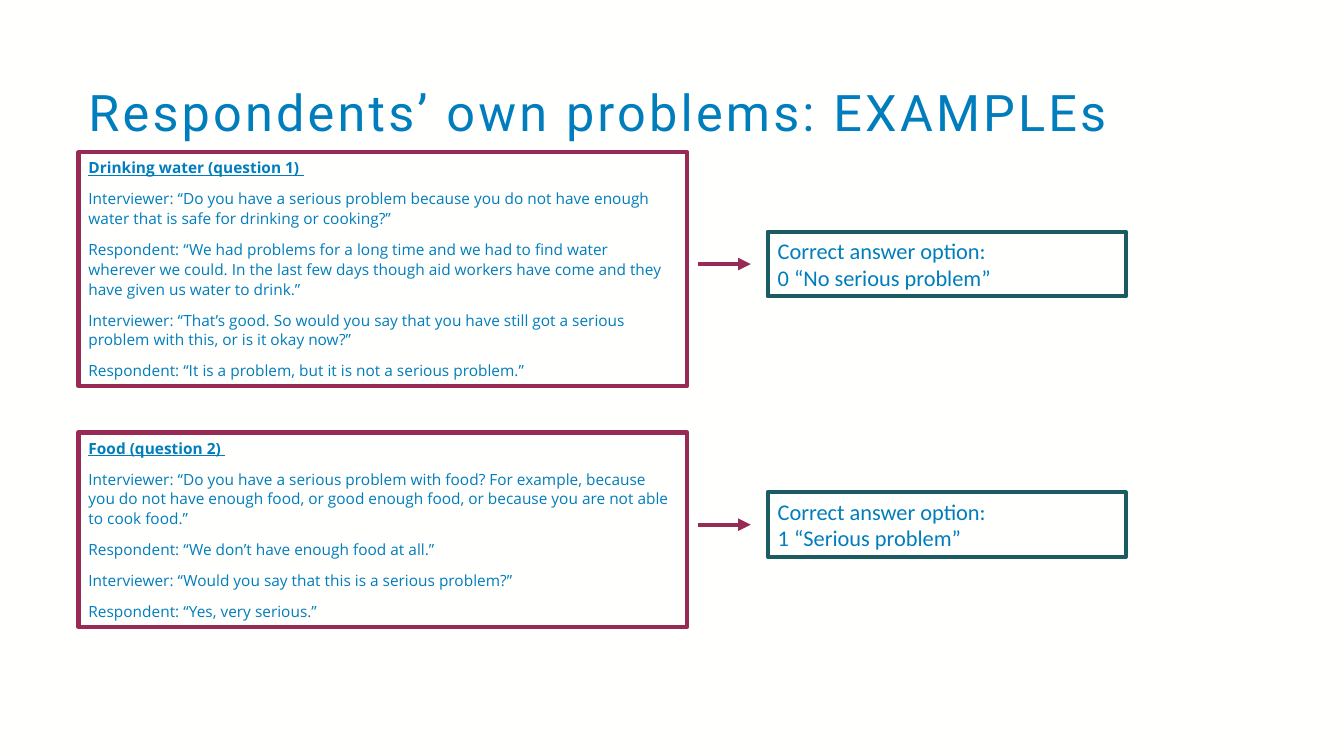
from lxml import etree
from pptx import Presentation
from pptx.dml.color import RGBColor
from pptx.enum.shapes import MSO_CONNECTOR, MSO_SHAPE
from pptx.enum.text import MSO_ANCHOR, MSO_AUTO_SIZE, PP_ALIGN
from pptx.oxml.ns import qn
from pptx.util import Cm, Pt

RECTANGLE = MSO_SHAPE.RECTANGLE
STRAIGHT = MSO_CONNECTOR.STRAIGHT
LEFT = PP_ALIGN.LEFT
TOP, MIDDLE = MSO_ANCHOR.TOP, MSO_ANCHOR.MIDDLE
GROW = MSO_AUTO_SIZE.SHAPE_TO_FIT_TEXT

COLOURS = {
    "background": "FFFFFE",
    "text": "007DBC",
    "dialogue": "982B56",
    "answer": "1B5B62",
}

# Shared geometry in centimetres
MARGIN = 1.98
DIALOGUE_WIDTH = 15.34
ARROW_START, ARROW_END = 17.6, 18.92
ANSWER_LEFT, ANSWER_WIDTH, ANSWER_HEIGHT = 19.35, 9.02, 1.63

# Each example: top and height of the dialogue, heading, turns, answer
EXAMPLES = [
    (3.84, 5.89, "Drinking water (question 1) ", [
        "Interviewer: “Do you have a serious problem because you do not have "
        "enough water that is safe for drinking or cooking?”",
        "Respondent: “We had problems for a long time and we had to find water "
        "wherever we could. In the last few days though aid workers have come "
        "and they have given us water to drink.”",
        "Interviewer: “That’s good. So would you say that you have still got a "
        "serious problem with this, or is it okay now?”",
        "Respondent: “It is a problem, but it is not a serious problem.”",
    ], "0 “No serious problem”"),
    (10.9, 4.9, "Food (question 2) ", [
        "Interviewer: “Do you have a serious problem with food? For example, "
        "because you do not have enough food, or good enough food, or because "
        "you are not able to cook food.”",
        "Respondent: “We don’t have enough food at all.”",
        "Interviewer: “Would you say that this is a serious problem?”",
        "Respondent: “Yes, very serious.”",
    ], "1 “Serious problem”"),
]


def colour(name):
    return RGBColor.from_string(COLOURS[name])


def add_span(para, text, font, size, heading=False):
    span = para.add_run()
    span.text = text
    span.font.name = font
    span.font.size = Pt(size)
    span.font.color.rgb = colour("text")
    span.font.bold = heading
    span.font.underline = heading
    return span


def add_title(page, text):
    box = page.shapes.add_textbox(Cm(MARGIN), Cm(1.98), Cm(30.71), Cm(1.83))
    frame = box.text_frame
    frame.word_wrap = True
    frame.vertical_anchor = MIDDLE
    para = frame.paragraphs[0]
    para.line_spacing = 0.9
    span = add_span(para, text, "Roboto", 36)
    span.font._element.set("spc", "230")  # letter spacing, 1/100 pt


def add_frame(page, left, top, width, height, line, anchor):
    box = page.shapes.add_shape(RECTANGLE, Cm(left), Cm(top), Cm(width), Cm(height))
    box.shadow.inherit = False
    box.fill.background()
    box.line.color.rgb = colour(line)
    box.line.width = Pt(3)
    frame = box.text_frame
    frame.word_wrap = True
    frame.auto_size = GROW
    frame.vertical_anchor = anchor
    return frame


def add_paragraphs(frame, lines, font, size, has_heading=False, spacing=None, after=None):
    for index, text in enumerate(lines):
        para = frame.add_paragraph() if index else frame.paragraphs[0]
        para.alignment = LEFT
        para.line_spacing = spacing
        para.space_after = after
        add_span(para, text, font, size, has_heading and index == 0)


def add_arrow(page, middle):
    arrow = page.shapes.add_connector(
        STRAIGHT, Cm(ARROW_START), Cm(middle), Cm(ARROW_END), Cm(middle))
    arrow.line.color.rgb = colour("dialogue")
    arrow.line.width = Pt(3)
    etree.SubElement(arrow.line._get_or_add_ln(), qn("a:tailEnd"), type="triangle")
    etree.SubElement(arrow._element.spPr, qn("a:effectLst"))


def add_example(page, top, height, heading, turns, answer):
    middle = top + height / 2
    # Dialogue
    frame = add_frame(page, MARGIN, top, DIALOGUE_WIDTH, height, "dialogue", TOP)
    add_paragraphs(frame, [heading, *turns], "Open Sans", 11, True, 1.07, Pt(8))
    # Arrow to the answer
    add_arrow(page, middle - 0.13)
    # Answer
    frame = add_frame(page, ANSWER_LEFT, middle - 0.13 - ANSWER_HEIGHT / 2,
                      ANSWER_WIDTH, ANSWER_HEIGHT, "answer", MIDDLE)
    add_paragraphs(frame, ["Correct answer option:", answer], "Calibri", 16)


def main():
    deck = Presentation()
    deck.slide_width, deck.slide_height = Cm(33.87), Cm(19.05)
    page = deck.slides.add_slide(deck.slide_layouts[6])
    page.background.fill.solid()
    page.background.fill.fore_color.rgb = colour("background")

    add_title(page, "Respondents’ own problems: EXAMPLEs")
    for example in EXAMPLES:
        add_example(page, *example)
    deck.save("out.pptx")


if __name__ == "__main__":
    main()
